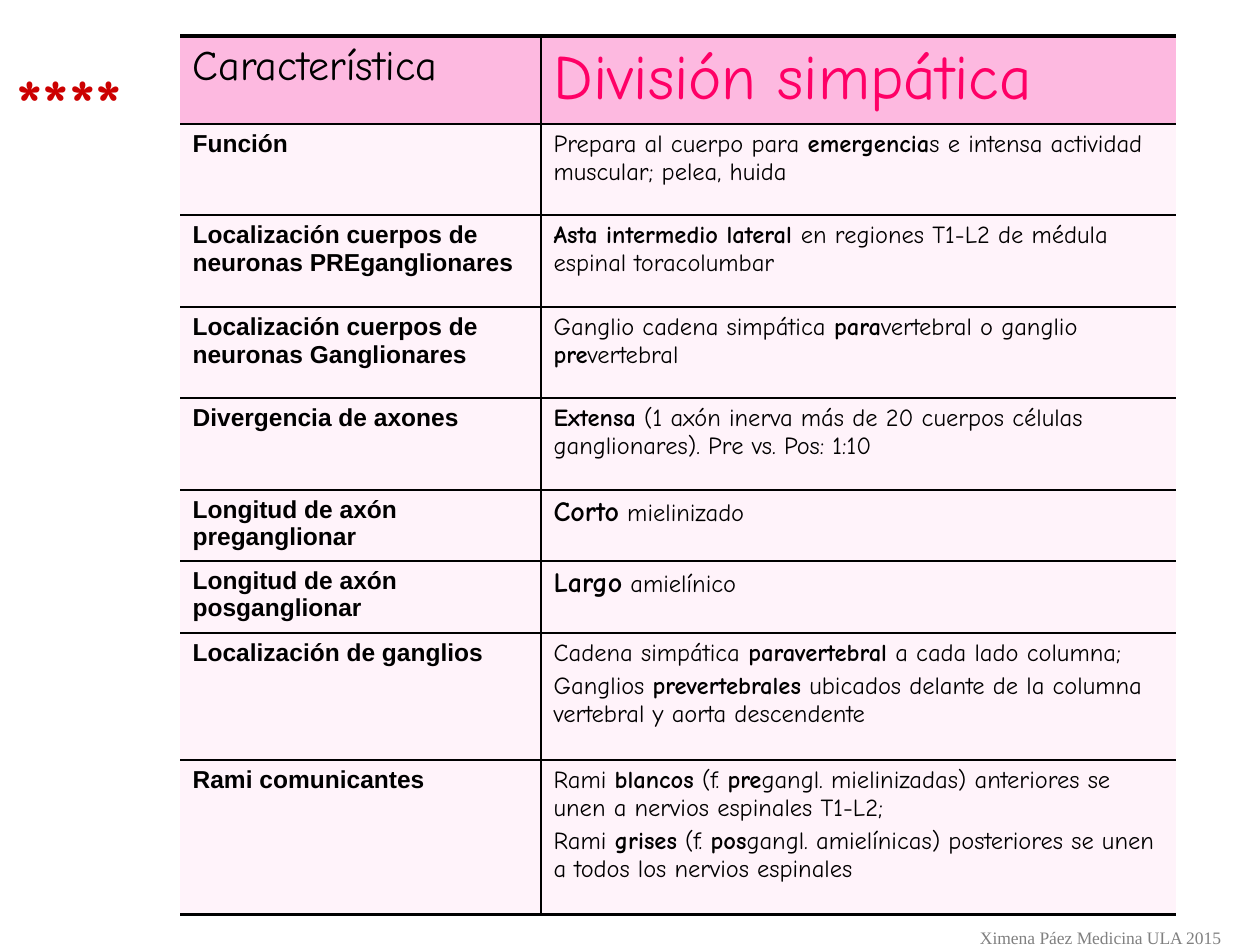
from dataclasses import dataclass

from lxml.etree import SubElement
from pptx import Presentation
from pptx.dml.color import RGBColor
from pptx.enum.text import PP_ALIGN
from pptx.oxml import parse_xml
from pptx.oxml.ns import nsdecls, qn
from pptx.util import Pt

EMU_PER_PX = 914400 // 126


@dataclass(frozen=True)
class Theme:
    black: str = "000000"
    pink: str = "FF0066"
    red: str = "CC0000"
    gray: str = "808080"
    header_fill: str = "FDB9E0"
    body_fill: str = "FFF3FA"
    hand: str = "Comic Neue"
    sans: str = "Arial"
    serif: str = "Times New Roman"
    title_size: int = 36
    header_size: int = 24
    key_size: int = 16
    body_size: int = 14
    stars_size: int = 40
    credit_size: int = 10
    thin: float = 1
    thick: float = 2.25


THEME = Theme()
COLUMN_WIDTHS = [361, 635]
ROW_HEIGHTS = [88, 91, 92, 91, 92, 71, 72, 127, 155]

# Label, paragraphs (| switches bold on and off), size of the bold words
ROWS = [
    ("Función",
     ["Prepara al cuerpo para |emergencia|s e intensa actividad muscular; pelea, huida"],
     THEME.body_size),
    ("Localización cuerpos de neuronas PREganglionares",
     ["|Asta intermedio lateral |en regiones T1-L2 de médula espinal toracolumbar"],
     THEME.body_size),
    ("Localización cuerpos de neuronas Ganglionares",
     ["Ganglio cadena simpática |para|vertebral o ganglio |pre|vertebral"],
     THEME.body_size),
    ("Divergencia de axones",
     ["|Extensa| (1 axón inerva más de 20 cuerpos células ganglionares). Pre vs. Pos: 1:10"],
     THEME.body_size),
    ("Longitud de axón preganglionar", ["|Corto| mielinizado"], THEME.key_size),
    ("Longitud de axón posganglionar", ["|Largo| amielínico"], THEME.key_size),
    ("Localización de ganglios",
     ["Cadena simpática |paravertebral| a cada lado columna;",
      "Ganglios |prevertebrales| ubicados delante de la columna vertebral y aorta descendente"],
     THEME.body_size),
    ("Rami comunicantes",
     ["Rami |blancos| (f. |pre|gangl. mielinizadas) anteriores se unen a nervios espinales T1-L2;",
      "Rami |grises| (f. |pos|gangl. amielínicas) posteriores se unen a todos los nervios espinales"],
     THEME.body_size),
]


def px(length):
    return length * EMU_PER_PX


def add_span(para, text, font, size, color, bold=False):
    span = para.add_run()
    span.text = text
    for name, value in {"name": font, "size": Pt(size), "bold": bold}.items():
        setattr(span.font, name, value)
    span.font.color.rgb = RGBColor.from_string(color)
    return span


def space_before(para, percent):
    spacing = SubElement(para._p.get_or_add_pPr(), qn("a:spcBef"))
    SubElement(spacing, qn("a:spcPct")).set("val", str(percent * 1000))


def add_text_shadow(span):
    shadow = parse_xml(
        f'<a:effectLst {nsdecls("a")}><a:outerShdw dist="35921" dir="2700000">'
        f'<a:srgbClr val="{THEME.black}"/></a:outerShdw></a:effectLst>')
    span.font._element.find(qn("a:solidFill")).addnext(shadow)


def set_borders(cell, widths):
    """Draw each side in L, R, T, B order; a width of 0 hides the side."""
    for side, width in widths.items():
        line = SubElement(cell._tc.get_or_add_tcPr(), qn(f"a:ln{side}"))
        line.set("w", str(Pt(width)))
        if width:
            fill = SubElement(line, qn("a:solidFill"))
            SubElement(fill, qn("a:srgbClr")).set("val", THEME.black)
        else:
            SubElement(line, qn("a:noFill"))


def fill_cell(cell, paragraphs, font, size, color, bold=False, bold_size=None):
    frame = cell.text_frame
    for index, text in enumerate(paragraphs):
        para = frame.add_paragraph() if index else frame.paragraphs[0]
        space_before(para, 20)
        for part, words in enumerate(text.split("|")):
            if words:
                strong = part % 2 == 1
                add_span(para, words, font, bold_size if strong else size,
                         color, bold or strong)


def add_comparison_table(page):
    frame = page.shapes.add_table(len(ROW_HEIGHTS), len(COLUMN_WIDTHS), px(180), px(36),
                                  px(sum(COLUMN_WIDTHS)), px(sum(ROW_HEIGHTS)))
    table = frame.table
    table.first_row = table.horz_banding = False
    for column, width in zip(table.columns, COLUMN_WIDTHS):
        column.width = px(width)
    for row, height in zip(table.rows, ROW_HEIGHTS):
        row.height = px(height)

    # Rules and fills
    last = len(ROW_HEIGHTS) - 1
    for row in range(last + 1):
        for column in range(2):
            cell = table.cell(row, column)
            set_borders(cell, {
                "L": THEME.thin if column else 0,
                "R": 0 if column else THEME.thin,
                "T": THEME.thin if row else THEME.thick,
                "B": THEME.thick if row == last else THEME.thin,
            })
            cell.fill.solid()
            cell.fill.fore_color.rgb = RGBColor.from_string(
                THEME.body_fill if row else THEME.header_fill)

    # Header row, then one row per feature
    fill_cell(table.cell(0, 0), ["Característica"], THEME.hand, THEME.header_size, THEME.black)
    fill_cell(table.cell(0, 1), ["División simpática"], THEME.hand, THEME.title_size, THEME.pink)
    for row, (label, paragraphs, bold_size) in enumerate(ROWS, start=1):
        fill_cell(table.cell(row, 0), [label], THEME.sans, THEME.body_size,
                  THEME.black, bold=True)
        fill_cell(table.cell(row, 1), paragraphs, THEME.hand, THEME.body_size,
                  THEME.black, bold_size=bold_size)


def add_label(page, area, text, font, size, color, bold=False, align=PP_ALIGN.LEFT):
    box = page.shapes.add_textbox(*map(px, area))
    box.text_frame.word_wrap = False
    para = box.text_frame.paragraphs[0]
    para.alignment = align
    return add_span(para, text, font, size, color, bold)


def main():
    deck = Presentation()
    deck.slide_width, deck.slide_height = px(1260), px(945)
    page = deck.slides.add_slide(deck.slide_layouts[6])

    add_comparison_table(page)

    # Star rating beside the header
    stars = add_label(page, (4, 53, 175, 97), "****", THEME.hand, THEME.stars_size,
                      THEME.red, bold=True)
    add_text_shadow(stars)

    # Credit line
    add_label(page, (965, 921, 271, 34), "Ximena Páez Medicina ULA 2015", THEME.serif,
              THEME.credit_size, THEME.gray, align=PP_ALIGN.CENTER)

    deck.save("out.pptx")


if __name__ == "__main__":
    main()
